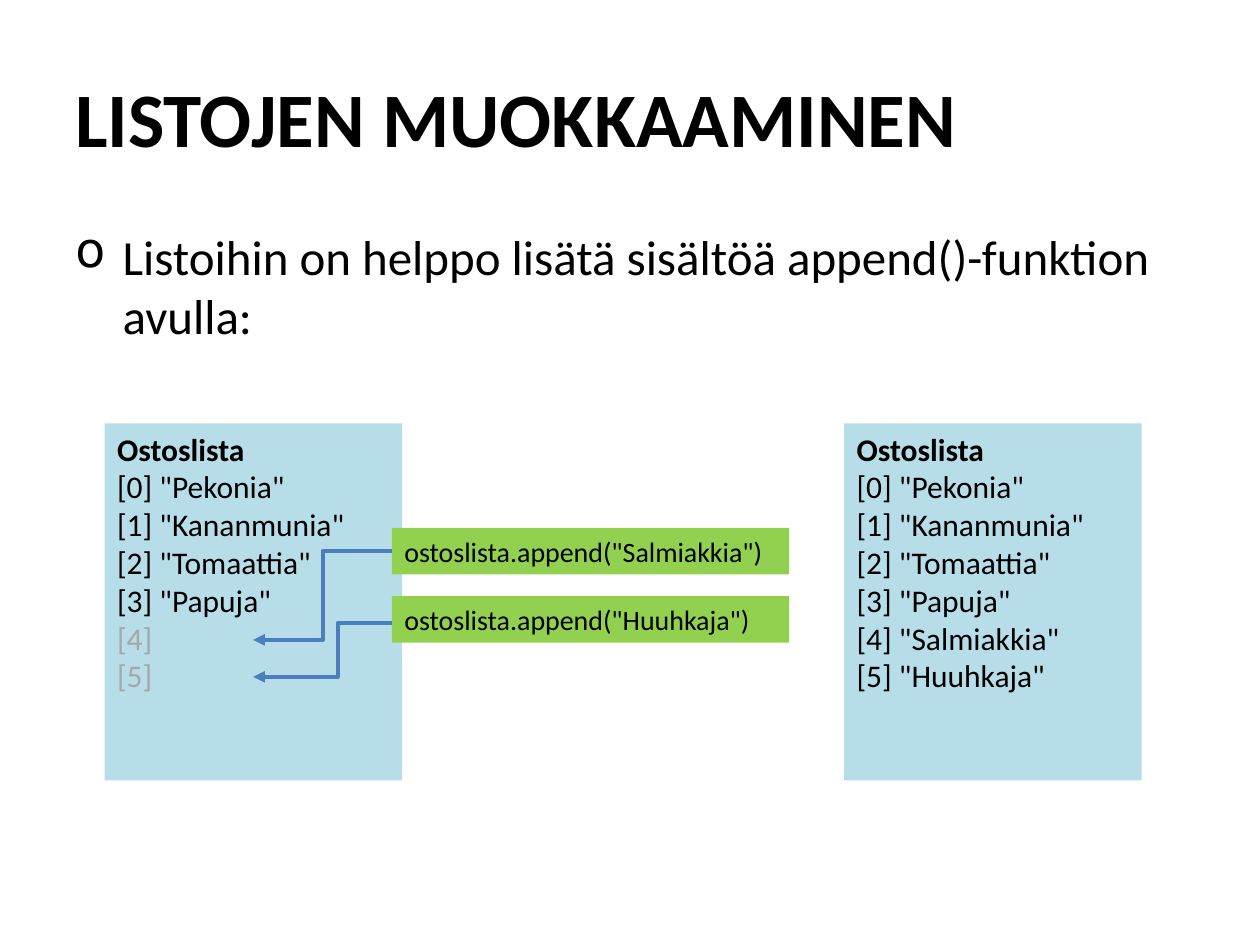
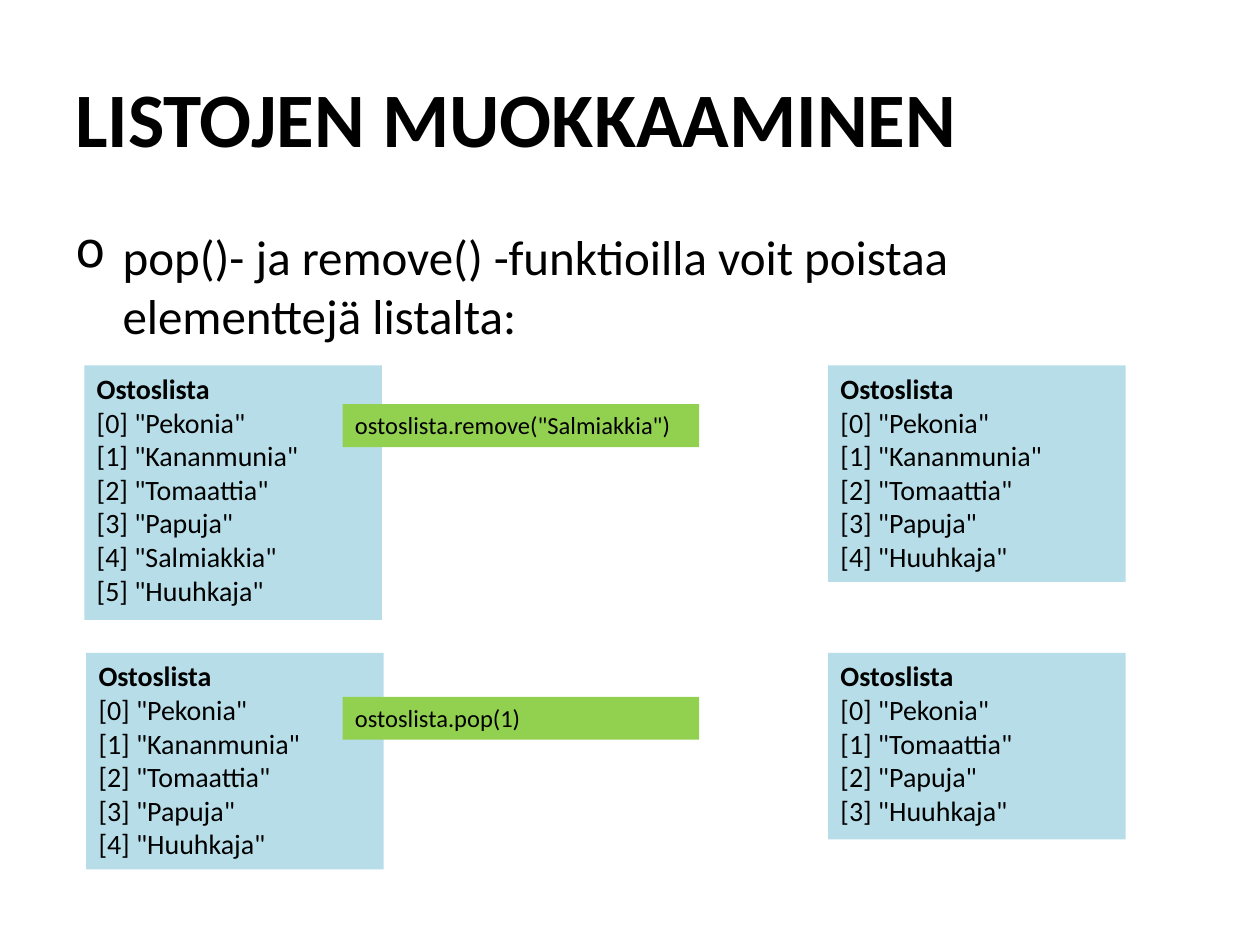
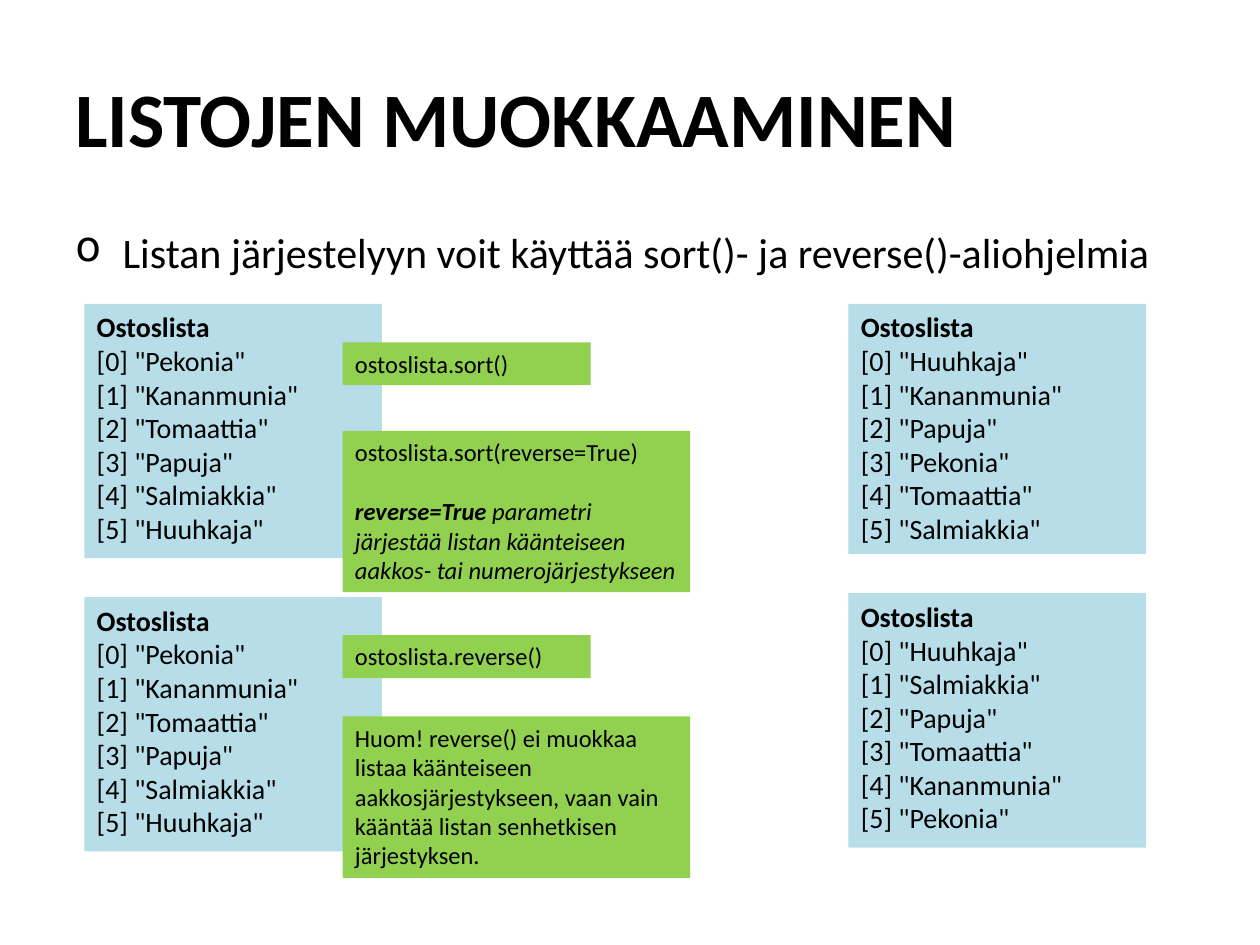
"""Build three slides on changing Python lists."""
from lxml.etree import SubElement
from pptx import Presentation
from pptx.dml.color import RGBColor
from pptx.enum.shapes import MSO_CONNECTOR as Connector
from pptx.enum.text import MSO_ANCHOR as Anchor
from pptx.oxml.ns import qn
from pptx.util import Pt

BLACK = RGBColor(0x00, 0x00, 0x00)
GREY = RGBColor(0xA6, 0xA6, 0xA6)
LIST_BLUE = RGBColor(0xB7, 0xDE, 0xE8)
CODE_GREEN = RGBColor(0x92, 0xD0, 0x50)
ARROW_BLUE = RGBColor(0x4B, 0x7E, 0xBC)
FONT = "Calibri"
TITLE = "LISTOJEN MUOKKAAMINEN"
LIST_WIDTH = 170
INDENT = 27

BASKET = ["Pekonia", "Kananmunia", "Tomaattia", "Papuja"]
FULL = BASKET + ["Salmiakkia", "Huuhkaja"]
REMOVED = BASKET + ["Huuhkaja"]
POPPED = ["Pekonia", "Tomaattia", "Papuja", "Huuhkaja"]
SORTED = ["Huuhkaja", "Kananmunia", "Papuja", "Pekonia", "Tomaattia", "Salmiakkia"]


def style(span, size, color=BLACK, bold=False, italic=False):
    """Set the font of one run."""
    font = span.font
    font.name, font.size = FONT, Pt(size)
    font.bold, font.italic = bold, italic
    font.color.rgb = color


def add_text(page, text, left, top, width, height, size, fill=None, bold=False):
    """Add a wrapping text box, filled if a colour is given."""
    box = page.shapes.add_textbox(Pt(left), Pt(top), Pt(width), Pt(height))
    box.text_frame.word_wrap = True
    box.text_frame.text = text
    if fill is not None:
        box.fill.solid()
        box.fill.fore_color.rgb = fill
    for para in box.text_frame.paragraphs:
        for span in para.runs:
            style(span, size, bold=bold)
    return box


def add_page(deck, intro, size=28):
    """Add a page with the shared title and one bulleted sentence."""
    page = deck.slides.add_slide(deck.slide_layouts[6])
    title = add_text(page, TITLE, 36, 21.6, 648, 90, 44, bold=True)
    title.text_frame.vertical_anchor = Anchor.MIDDLE
    body = add_text(page, intro, 36, 126, 648, 356.4, size)
    properties = body.text_frame.paragraphs[0]._p.get_or_add_pPr()
    properties.set("marL", str(Pt(INDENT)))
    properties.set("indent", str(-Pt(INDENT)))
    SubElement(properties, qn("a:buChar"), char="o")
    return page


def add_list(page, items, left, top, height, size=16):
    """Add a shopping list box; empty items become grey free places."""
    rows = [f'[{index}] "{item}"' if item else f"[{index}]" for index, item in enumerate(items)]
    text = "\n".join(["Ostoslista"] + rows)
    box = add_text(page, text, left, top, LIST_WIDTH, height, size, LIST_BLUE)
    heading, *entries = box.text_frame.paragraphs
    heading.runs[0].font.bold = True
    for item, para in zip(items, entries):
        if not item:
            para.runs[0].font.color.rgb = GREY


def add_code(page, text, top, left=195.8, width=203.8, height=24.5, size=14):
    """Add a green box with code or a note on it."""
    return add_text(page, text, left, top, width, height, size, CODE_GREEN)


def add_arrow(page, start, end, bend):
    """Add an elbow arrow that turns at the given share of its width."""
    arrow = page.shapes.add_connector(Connector.ELBOW, *map(Pt, start + end))
    arrow.line.color.rgb = ARROW_BLUE
    arrow.line.width = Pt(2.25)
    SubElement(arrow.line._get_or_add_ln(), qn("a:tailEnd"), type="triangle")
    properties = arrow._element.spPr
    SubElement(properties, qn("a:effectLst"))
    guides = properties.find(qn("a:prstGeom")).get_or_add_avLst()
    SubElement(guides, qn("a:gd"), name="adj1", fmla=f"val {round(bend * 100000)}")


def build_append(deck):
    """Show how append() fills the free places."""
    page = add_page(deck, "Listoihin on helppo lisätä sisältöä append()-funktion avulla:")
    add_list(page, BASKET + ["", ""], 59.8, 242, 204, 18)
    for item, top in (("Salmiakkia", 301.7), ("Huuhkaja", 340.6)):
        add_code(page, f'ostoslista.append("{item}")', top, 224, 227, 26.6, 16)
    add_arrow(page, (224, 314.9), (144.7, 365.6), 0.5)
    add_arrow(page, (224, 355.9), (144.7, 386.8), 0.39)
    add_list(page, FULL, 482.4, 242, 204, 18)


def build_removal(deck):
    """Show how remove() and pop() shorten the list."""
    page = add_page(deck, "pop()- ja remove() -funktioilla voit poistaa elementtejä listalta:")
    add_list(page, FULL, 48.2, 208.8, 145.4)
    add_code(page, 'ostoslista.remove("Salmiakkia")', 231)
    add_list(page, REMOVED, 473.2, 208.8, 123.8)
    add_list(page, REMOVED, 49.2, 373, 123.8)
    add_code(page, "ostoslista.pop(1)", 398.2)
    add_list(page, POPPED, 473.2, 373, 106.6)


def build_sorting(deck):
    """Show how sort() and reverse() reorder the list."""
    intro = "Listan järjestelyyn voit käyttää sort()- ja reverse()-aliohjelmia"
    page = add_page(deck, intro, 24)
    add_list(page, FULL, 48.2, 173.6, 145.4)
    add_code(page, "ostoslista.sort()", 195.7, width=141.8)
    add_list(page, SORTED, 484.8, 173.6, 143)
    add_list(page, FULL, 48.2, 341.2, 145.4)
    add_code(page, "ostoslista.reverse()", 363, width=141.8)
    add_list(page, FULL[::-1], 484.8, 339, 145.4)

    box = add_code(page, "ostoslista.sort(reverse=True)", 246.2, width=198.6, height=92.2)
    para = box.text_frame.add_paragraph()
    para.space_before = Pt(17)
    note = " parametri järjestää listan käänteiseen aakkos- tai numerojärjestykseen"
    for text, bold in (("reverse=True", True), (note, False)):
        span = para.add_run()
        span.text = text
        style(span, 14, bold=bold, italic=True)

    warning = ("Huom! reverse() ei muokkaa listaa käänteiseen aakkosjärjestykseen, "
               "vaan vain kääntää listan senhetkisen järjestyksen.")
    add_code(page, warning, 409.4, width=198.6, height=92.2)


def main():
    """Build and save the deck."""
    deck = Presentation()
    deck.slide_width, deck.slide_height = Pt(720), Pt(540)
    build_append(deck)
    build_removal(deck)
    build_sorting(deck)
    deck.save("out.pptx")


if __name__ == "__main__":
    main()
